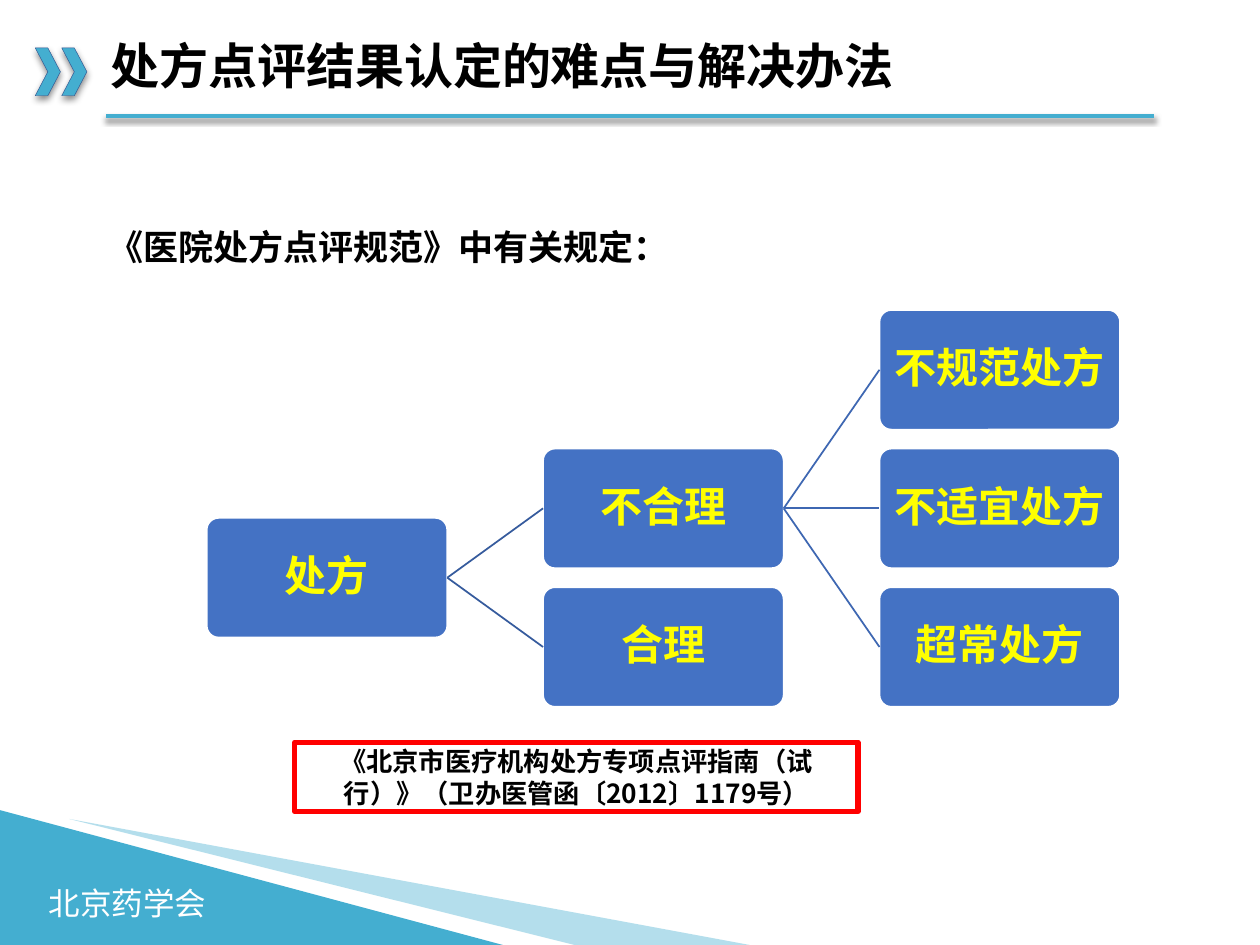
from lxml import etree
from pptx import Presentation, util as u
from pptx.dml.color import RGBColor
from pptx.enum import shapes, text
from pptx.oxml import ns

THEME = dict(
    font="Noto Sans CJK SC", aqua="44AED0", edge="325491", node="4472C4",
    first="365B9D", second="3E67B2", label="FFFF00", ink="000000",
    white="FFFFFF", red="FF0000", grey="808080",
    title=28, lead=20, tree=24, note=15, foot=18)
KIND = shapes.MSO_SHAPE
ALIGN = text.PP_ALIGN
rgb = {key: RGBColor.from_string(val) for key, val in THEME.items()
       if isinstance(val, str) and key != "font"}


def write(shape, words, size, color, bold=True, align=ALIGN.LEFT, inset=None, wrap=True):
    frame = shape.text_frame
    frame.word_wrap = wrap
    frame.vertical_anchor = text.MSO_ANCHOR.MIDDLE
    if inset is not None:
        frame.margin_left = frame.margin_right = u.Inches(inset)
        frame.margin_top = frame.margin_bottom = u.Inches(inset)
    para = frame.paragraphs[0]
    para.alignment = align
    run = para.add_run()
    run.text = words
    run.font.name = THEME["font"]
    run.font.size = u.Pt(THEME[size])
    run.font.bold = bold
    run.font.color.rgb = rgb[color]
    etree.SubElement(run._r.get_or_add_rPr(), ns.qn("a:ea"), typeface=THEME["font"])
    return para


def shade(shape, color=None, alpha=100, blur=0, dist=0):
    """Replace the theme shadow by a downward one, or by none without a color."""
    props = shape._element.spPr
    for old in props.findall(ns.qn("a:effectLst")):
        props.remove(old)
    fx = etree.SubElement(props, ns.qn("a:effectLst"))
    if color:
        drop = etree.SubElement(fx, ns.qn("a:outerShdw"), blurRad=str(u.Pt(blur)),
                                dist=str(u.Pt(dist)), dir="5400000", rotWithShape="0")
        tint = etree.SubElement(drop, ns.qn("a:srgbClr"), val=THEME[color])
        etree.SubElement(tint, ns.qn("a:alpha"), val=str(alpha * 1000))


deck = Presentation()
deck.slide_width, deck.slide_height = u.Inches(10), u.Inches(7.5)
W, H = deck.slide_width, deck.slide_height
slide = deck.slides.add_slide(deck.slide_layouts[6])
items = slide.shapes

# Heading rule and chevrons
rule = items.add_connector(shapes.MSO_CONNECTOR.STRAIGHT,
                           u.Inches(9.16), u.Inches(0.92), u.Inches(0.84), u.Inches(0.92))
rule.line.color.rgb = rgb["aqua"]
rule.line.width = u.Pt(2.25)
shade(rule, "grey", 100, 3, 2)

for left in (0.49, 0.28):
    mark = items.add_shape(KIND.CHEVRON, u.Inches(left), u.Inches(0.38),
                           u.Inches(0.2), u.Inches(0.38))
    mark.fill.solid()
    mark.fill.fore_color.rgb = rgb["aqua"]
    mark.line.color.rgb = rgb["edge"]
    mark.line.width = u.Pt(0.25)
    shade(mark, "ink", 46, 4, 2)

# Footer wedges
wedge = items.add_shape(KIND.ISOSCELES_TRIANGLE, 0, u.Inches(6.43),
                        u.Inches(3.99), H - u.Inches(6.43))
wedge.adjustments[0] = 0
wedge.fill.solid()
wedge.fill.fore_color.rgb = rgb["aqua"]
wedge.line.fill.background()
shade(wedge)

pen = items.build_freeform(u.Inches(0.55), u.Inches(6.5))
pen.add_line_segments([(u.Inches(5.95), H), (u.Inches(4.56), H)])
ray = pen.convert_to_shape()
ray.fill.solid()
ray.fill.fore_color.rgb = rgb["aqua"]
tint = ray._element.spPr.find(ns.qn("a:solidFill"))[0]
etree.SubElement(tint, ns.qn("a:alpha"), val="40000")
ray.line.fill.background()
shade(ray)

# Plain text: left, top, width, height, words, size, color, bold, wrap
for x, y, w, h, words, size, color, bold, wrap in (
        (0.29, 6.97, 1.46, 0.4, "北京药学会", "foot", "white", False, False),
        (0.78, 0.22, 7.64, 0.65, "处方点评结果认定的难点与解决办法", "title", "ink", True, True),
        (0.76, 1.74, 4.69, 0.44, "《医院处方点评规范》中有关规定：", "lead", "ink", True, False)):
    box = items.add_textbox(u.Inches(x), u.Inches(y), u.Inches(w), u.Inches(h))
    para = write(box, words, size, color, bold, wrap=wrap)
    if size == "title":
        para.line_spacing = 0.9

# Tree: each node sits at a column and a row of one grid
LEFT, TOP = u.Inches(1.64), u.Inches(2.46)
COL, ROW = u.Inches(2.67), u.Inches(1.1)
nodes = {}
for words, col, row in (("处方", 0, 1.5), ("不合理", 1, 1), ("合理", 1, 2),
                        ("不规范处方", 2, 0), ("不适宜处方", 2, 1), ("超常处方", 2, 2)):
    node = items.add_shape(KIND.ROUNDED_RECTANGLE, LEFT + COL * col, int(TOP + ROW * row),
                           u.Inches(1.91), u.Inches(0.95))
    node.adjustments[0] = 0.1
    node.fill.solid()
    node.fill.fore_color.rgb = rgb["node"]
    node.line.color.rgb = rgb["white"]
    node.line.width = u.Pt(1)
    shade(node)
    write(node, words, "tree", "label", align=ALIGN.CENTER, inset=0.05).line_spacing = 0.9
    nodes[words] = node

for start, ends, color in (("处方", ("不合理", "合理"), "first"),
                           ("不合理", ("不规范处方", "不适宜处方", "超常处方"), "second")):
    for end in ends:
        link = items.add_connector(shapes.MSO_CONNECTOR.STRAIGHT, 0, 0, 0, 0)
        link.begin_connect(nodes[start], 3)
        link.end_connect(nodes[end], 1)
        link.line.color.rgb = rgb[color]
        link.line.width = u.Pt(1)
        shade(link)

# Source note
note = items.add_shape(KIND.RECTANGLE, u.Inches(2.34), u.Inches(5.89),
                       u.Inches(4.47), u.Inches(0.55))
note.fill.solid()
note.fill.fore_color.rgb = rgb["white"]
note.line.color.rgb = rgb["red"]
note.line.width = u.Pt(3)
shade(note)
write(note, "《北京市医疗机构处方专项点评指南（试行）》（卫办医管函〔2012〕1179号）",
      "note", "ink", align=ALIGN.CENTER)

deck.save("out.pptx")
